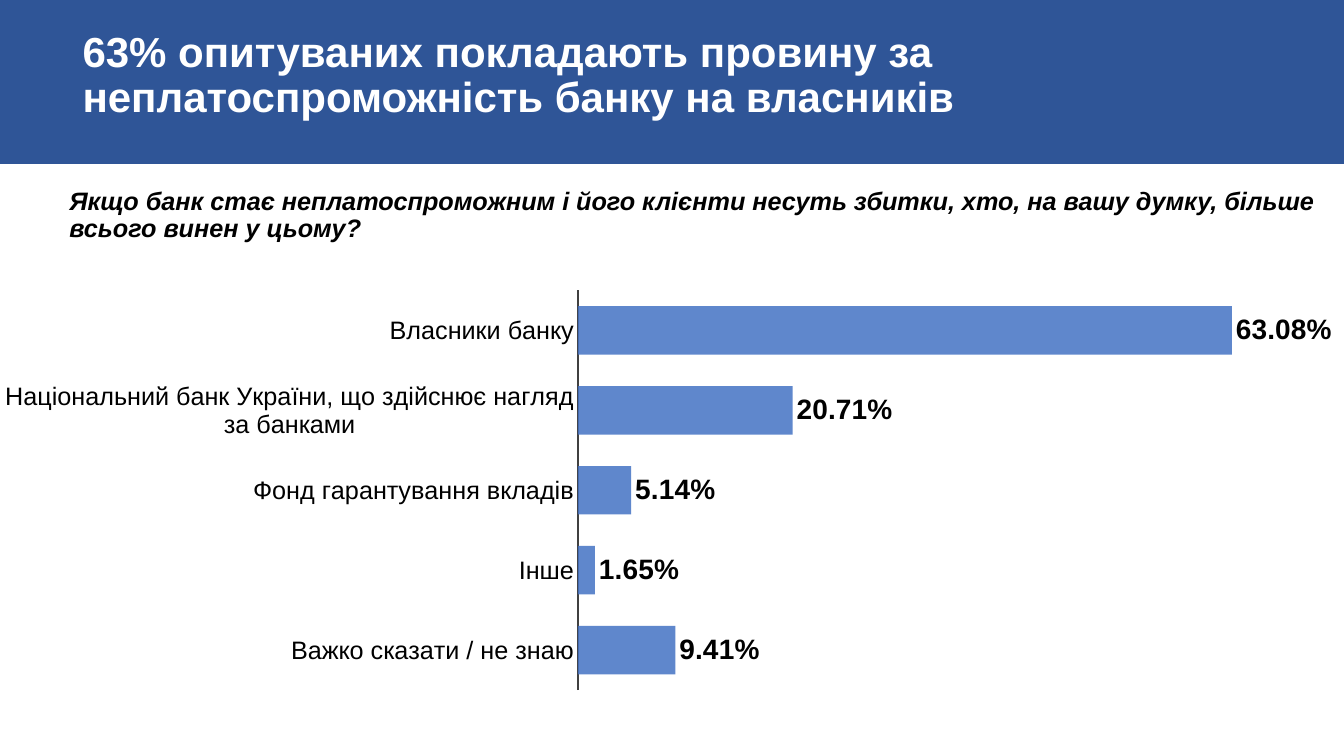
from dataclasses import dataclass

from lxml import etree
from pptx import Presentation
from pptx.chart.data import CategoryChartData
from pptx.dml.color import RGBColor
from pptx.enum.chart import XL_CHART_TYPE, XL_LABEL_POSITION, XL_TICK_LABEL_POSITION, XL_TICK_MARK
from pptx.enum.shapes import MSO_SHAPE
from pptx.enum.text import MSO_ANCHOR
from pptx.oxml import parse_xml
from pptx.oxml.ns import nsdecls, qn
from pptx.util import Inches, Pt

BAR = XL_CHART_TYPE.BAR_CLUSTERED
OUTSIDE_END = XL_LABEL_POSITION.OUTSIDE_END
NO_LABELS = XL_TICK_LABEL_POSITION.NONE
NO_TICK = XL_TICK_MARK.NONE
RECT = MSO_SHAPE.RECTANGLE
TOP, MIDDLE = MSO_ANCHOR.TOP, MSO_ANCHOR.MIDDLE


@dataclass(frozen=True)
class Theme:
    font: str = "Arial"
    banner: RGBColor = RGBColor(0x2F, 0x55, 0x97)
    bar: RGBColor = RGBColor(0x44, 0x72, 0xC4)
    axis: RGBColor = RGBColor(0x40, 0x40, 0x40)
    white: RGBColor = RGBColor(0xFF, 0xFF, 0xFF)
    black: RGBColor = RGBColor(0, 0, 0)
    title: int = 30
    value: int = 20
    body: int = 18
    bar_opacity: int = 85


THEME = Theme()

ANSWERS = [
    ("Власники банку", 0.6308),
    ("Національний банк України, що здійснює нагляд за банками", 0.2071),
    ("Фонд гарантування вкладів", 0.0514),
    ("Інше", 0.0165),
    ("Важко сказати / не знаю", 0.0941),
]


def set_font(font, size, color=THEME.black, bold=False, italic=False):
    font.name = THEME.font
    font.size = Pt(size)
    font.color.rgb = color
    font.bold = bold
    font.italic = italic


def add_banner(s, width, height):
    sp = s.shapes.add_shape(RECT, 0, 0, width, height)
    sp.shadow.inherit = False
    sp.fill.solid()
    sp.fill.fore_color.rgb = THEME.banner
    sp.line.color.rgb = THEME.banner
    sp.line.width = Pt(1)


def add_text(s, text, box, anchor=TOP, **fmt):
    sp = s.shapes.add_textbox(*map(Inches, box))
    tf = sp.text_frame
    tf.word_wrap = True
    tf.vertical_anchor = anchor
    p = tf.paragraphs[0]
    p.line_spacing = 0.9
    r = p.add_run()
    r.text = text
    set_font(r.font, **fmt)


def set_plot_area(chart, x, y, w, h):
    plot_area = chart.plots[0]._element.getparent()
    for old in plot_area.findall(qn("c:layout")):
        plot_area.remove(old)
    sizes = "".join(f'<c:{k} val="{v}"/>' for k, v in zip("xywh", (x, y, w, h)))
    plot_area.insert(0, parse_xml(
        f'<c:layout {nsdecls("c")}><c:manualLayout><c:layoutTarget val="inner"/>'
        f'<c:xMode val="edge"/><c:yMode val="edge"/>{sizes}</c:manualLayout></c:layout>'))


def set_opacity(fill_parent, percent):
    color = next(fill_parent.iter(qn("a:srgbClr")))
    etree.SubElement(color, qn("a:alpha")).set("val", str(percent * 1000))


def add_answer_chart(s, answers, box):
    data = CategoryChartData(number_format="0.00%")
    bottom_up = answers[::-1]
    data.categories = [name for name, _ in bottom_up]
    data.add_series("Series 1", [share for _, share in bottom_up])
    chart = s.shapes.add_chart(BAR, *map(Inches, box), data).chart
    chart.has_legend = False
    chart.has_title = False
    set_font(chart.font, THEME.body)
    set_plot_area(chart, 0.43, 0.05, 0.54, 0.94)

    cat = chart.category_axis
    cat.major_tick_mark = cat.minor_tick_mark = NO_TICK
    cat.has_major_gridlines = False
    cat.format.line.color.rgb = THEME.axis
    cat.format.line.width = Pt(1.5)
    set_font(cat.tick_labels.font, THEME.body)

    val = chart.value_axis
    val.minimum_scale, val.maximum_scale = 0, 0.7
    val.has_major_gridlines = False
    val.tick_label_position = NO_LABELS
    val.visible = False

    plot = chart.plots[0]
    plot.vary_by_categories = False
    plot.gap_width = 65
    series = plot.series[0]
    series.format.fill.solid()
    series.format.fill.fore_color.rgb = THEME.bar
    set_opacity(series._element, THEME.bar_opacity)

    labels = series.data_labels
    labels.show_value = True
    labels.number_format = "0.00%"
    labels.number_format_is_linked = False
    labels.position = OUTSIDE_END
    set_font(labels.font, THEME.value, bold=True)


def main():
    prs = Presentation()
    prs.slide_width, prs.slide_height = Inches(13.33), Inches(7.5)
    s = prs.slides.add_slide(prs.slide_layouts[6])
    add_banner(s, prs.slide_width, Inches(1.62))
    add_text(s, "63% опитуваних покладають провину за неплатоспроможність банку на власників",
             (0.72, 0.3, 12.61, 0.92), anchor=MIDDLE,
             size=THEME.title, color=THEME.white, bold=True)
    add_text(s, "Якщо банк стає неплатоспроможним i його клієнти несуть збитки, "
                "хто, на вашу думку, бiльше всього винен у цьому?",
             (0.59, 1.82, 12.74, 0.84), size=THEME.body, bold=True, italic=True)
    add_answer_chart(s, ANSWERS, (0, 2.67, 13.33, 4.22))
    prs.save("out.pptx")


if __name__ == "__main__":
    main()
